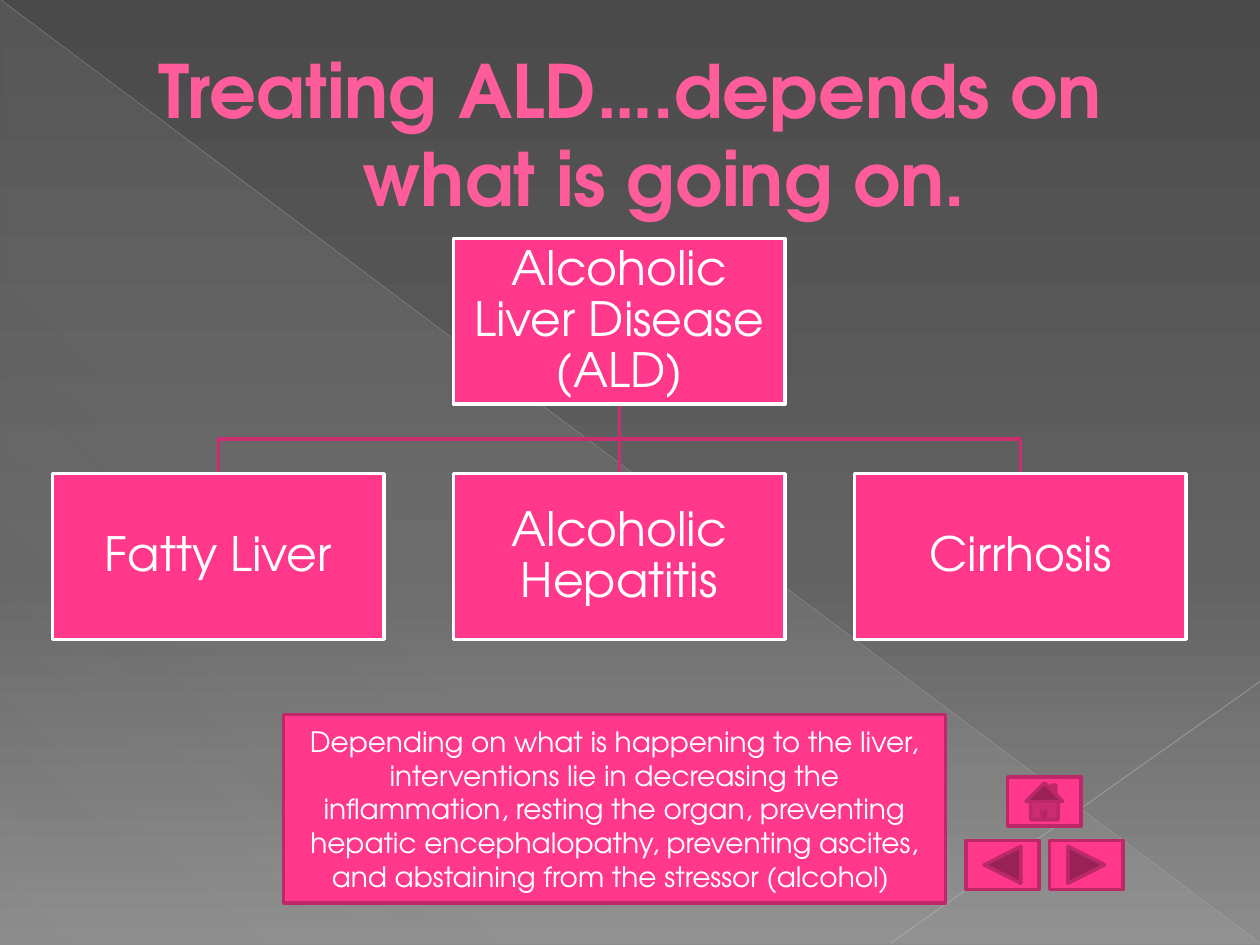
from lxml.etree import SubElement
from pptx import Presentation
from pptx.dml.color import RGBColor
from pptx.enum.shapes import MSO_CONNECTOR, MSO_SHAPE
from pptx.enum.text import MSO_ANCHOR, MSO_AUTO_SIZE, PP_ALIGN
from pptx.oxml import parse_xml
from pptx.oxml.ns import nsdecls, qn
from pptx.util import Cm, Pt

FONT = "TeX Gyre Adventor"
PINK, DARK_PINK, BRANCH_PINK, WHITE = "FF388C", "BD2968", "CC2D70", "FFFFFF"


def color(hex_value):
    """Turn a hex string into a colour."""
    return RGBColor.from_string(hex_value)


def set_gradient(owner, fill, stops, angle):
    """Give the owner's fill a linear gradient of (position, hex, opacity) stops."""
    fill.solid()
    fill.fore_color.rgb = color(WHITE)
    stops_xml = "".join(
        f'<a:gs pos="{position * 1000}"><a:srgbClr val="{hex_value}">'
        f'<a:alpha val="{opacity * 1000}"/></a:srgbClr></a:gs>'
        for position, hex_value, opacity in stops)
    gradient = parse_xml(
        f'<a:gradFill {nsdecls("a")} rotWithShape="1"><a:gsLst>{stops_xml}</a:gsLst>'
        f'<a:lin ang="{angle * 60000}" scaled="0"/></a:gradFill>')
    solid = owner.element.find(".//" + qn("a:solidFill"))
    solid.getparent().replace(solid, gradient)


def set_line(shape, hex_value, width, opacity=100):
    """Style an outline or a line."""
    shape.line.width = Pt(width)
    shape.line.color.rgb = color(hex_value)
    if opacity < 100:
        line_color = shape.element.find(".//" + qn("a:ln")).find(".//" + qn("a:srgbClr"))
        SubElement(line_color, qn("a:alpha")).set("val", str(opacity * 1000))


def add_line(slide, start, end, hex_value, width, opacity=100):
    """Add a straight line without a shadow."""
    line = slide.shapes.add_connector(
        MSO_CONNECTOR.STRAIGHT, *map(Cm, start), *map(Cm, end))
    set_line(line, hex_value, width, opacity)
    SubElement(line.element.spPr, qn("a:effectLst"))
    return line


def add_pink_shape(slide, kind, box, border):
    """Add a pink preset shape with a border."""
    shape = slide.shapes.add_shape(kind, *map(Cm, box))
    shape.shadow.inherit = False
    shape.fill.solid()
    shape.fill.fore_color.rgb = color(PINK)
    set_line(shape, border, 2)
    return shape


def write(shape, text, size, hex_value=WHITE):
    """Write one centred run and return its paragraph and run."""
    frame = shape.text_frame
    frame.word_wrap = True
    frame.vertical_anchor = MSO_ANCHOR.MIDDLE
    paragraph = frame.paragraphs[0]
    paragraph.alignment = PP_ALIGN.CENTER
    run = paragraph.add_run()
    run.text = text
    run.font.name = FONT
    run.font.size = Pt(size)
    run.font.color.rgb = color(hex_value)
    return paragraph, run


def add_backdrop(slide, box):
    """Fill the background and lay the pale triangle and rays over it."""
    left, top, width, height = box
    set_gradient(slide, slide.background.fill,
                 [(0, "4A4A4A", 100), (60, "626262", 100), (100, "8C8C8C", 100)], 90)
    triangle = slide.shapes.add_shape(MSO_SHAPE.RIGHT_TRIANGLE, *map(Cm, box))
    triangle.shadow.inherit = False
    set_gradient(triangle, triangle.fill,
                 [(0, "D2D2D2", 10), (70, "D2D2D2", 8), (100, "D2D2D2", 1)], 133)
    triangle.line.fill.background()
    right, bottom = left + width, top + height
    add_line(slide, (left, top), (right, bottom), "BFBFBF", 0.39, 35)
    add_line(slide, (right, top + 13.74), (left + 17.94, bottom), "C6C6C6", 0.47, 45)


def add_navigation(slide, box):
    """Add a home button centred above back and next buttons."""
    left, top, width, height = box
    button_width, button_height = 1.48, 0.99
    right, bottom = left + width - button_width, top + height - button_height
    for kind, x, y in (
        (MSO_SHAPE.ACTION_BUTTON_FORWARD_OR_NEXT, right, bottom),
        (MSO_SHAPE.ACTION_BUTTON_BACK_OR_PREVIOUS, left, bottom),
        (MSO_SHAPE.ACTION_BUTTON_HOME, (left + right) / 2, top),
    ):
        add_pink_shape(slide, kind, (x, y, button_width, button_height), DARK_PINK)


def add_title(slide, box):
    """Place and format the title placeholder in front of the backdrop."""
    title = slide.shapes.title
    title.left, title.top, title.width, title.height = map(Cm, box)
    slide.shapes.element.append(title.element)
    paragraph, run = write(title, "Treating ALD….depends on what is going on.", 42, "FF5C9C")
    title.text_frame.auto_size = MSO_AUTO_SIZE.NONE
    run.font.bold = True
    hanging = Cm(1.35)
    properties = paragraph._p.get_or_add_pPr()
    properties.set("marL", str(hanging))
    properties.set("indent", str(-hanging))
    run._r.get_or_add_rPr().insert(0, parse_xml(
        f'<a:ln {nsdecls("a")} w="{Pt(0.5)}"><a:solidFill>'
        '<a:srgbClr val="B12761"/></a:solidFill></a:ln>'))


def add_node(slide, text, box):
    """Add one box of the disease tree."""
    node = add_pink_shape(slide, MSO_SHAPE.RECTANGLE, box, WHITE)
    paragraph, _ = write(node, text, 27)
    paragraph.line_spacing = 0.9
    frame = node.text_frame
    frame.margin_left = frame.margin_right = Cm(0.05)
    frame.margin_top = frame.margin_bottom = Cm(0.05)
    return node


def add_elbow(slide, points):
    """Add an open bent line through the points."""
    start, *rest = [(Cm(x), Cm(y)) for x, y in points]
    builder = slide.shapes.build_freeform(*start)
    builder.add_line_segments(rest, close=False)
    elbow = builder.convert_to_shape()
    elbow.shadow.inherit = False
    elbow.fill.background()
    set_line(elbow, BRANCH_PINK, 2)
    return elbow


def add_disease_tree(slide, box, disease, stages):
    """Add the disease above its stages, joined by branches."""
    left, top, width, height = box
    gap = 1.4
    node_width = (width - gap * (len(stages) - 1)) / len(stages)
    node_height = (height - gap) / 2
    center = left + width / 2
    root_bottom, stage_top = top + node_height, top + node_height + gap
    root = add_node(slide, disease,
                    (center - node_width / 2, top, node_width, node_height))
    for index, stage in enumerate(stages):
        x = left + index * (node_width + gap)
        node = add_node(slide, stage, (x, stage_top, node_width, node_height))
        middle = x + node_width / 2
        if abs(middle - center) < 0.01:
            branch = add_line(slide, (center, root_bottom), (center, stage_top),
                              BRANCH_PINK, 2)
            branch.begin_connect(root, 2)
            branch.end_connect(node, 0)
        else:
            bend = root_bottom + gap / 2
            branch = add_elbow(slide, [(center, root_bottom), (center, bend),
                                       (middle, bend), (middle, stage_top)])
        root.element.addprevious(branch.element)


def add_treatment_note(slide, box):
    """Add the box that sums up the interventions."""
    note = add_pink_shape(slide, MSO_SHAPE.RECTANGLE, box, DARK_PINK)
    write(note, "Depending on what is happening to the liver, interventions lie in "
                "decreasing the inflammation, resting the organ, preventing hepatic "
                "encephalopathy, preventing ascites, and abstaining from the stressor "
                "(alcohol) ", 16)


def main():
    """Build and save the slide."""
    presentation = Presentation()
    presentation.slide_width, presentation.slide_height = Cm(25.4), Cm(19.05)
    slide = presentation.slides.add_slide(presentation.slide_layouts[5])
    add_backdrop(slide, (0.02, 0, 25.38, 19.01))
    add_navigation(slide, (19.47, 15.66, 3.17, 2.27))
    add_title(slide, (1.27, 0.74, 22.86, 3.89))
    add_disease_tree(slide, (1.06, 4.81, 22.85, 8.08), "Alcoholic Liver Disease (ALD)",
                     ["Fatty Liver", "Alcoholic Hepatitis", "Cirrhosis"])
    add_treatment_note(slide, (5.72, 14.4, 13.34, 3.81))
    presentation.save("out.pptx")


if __name__ == "__main__":
    main()
